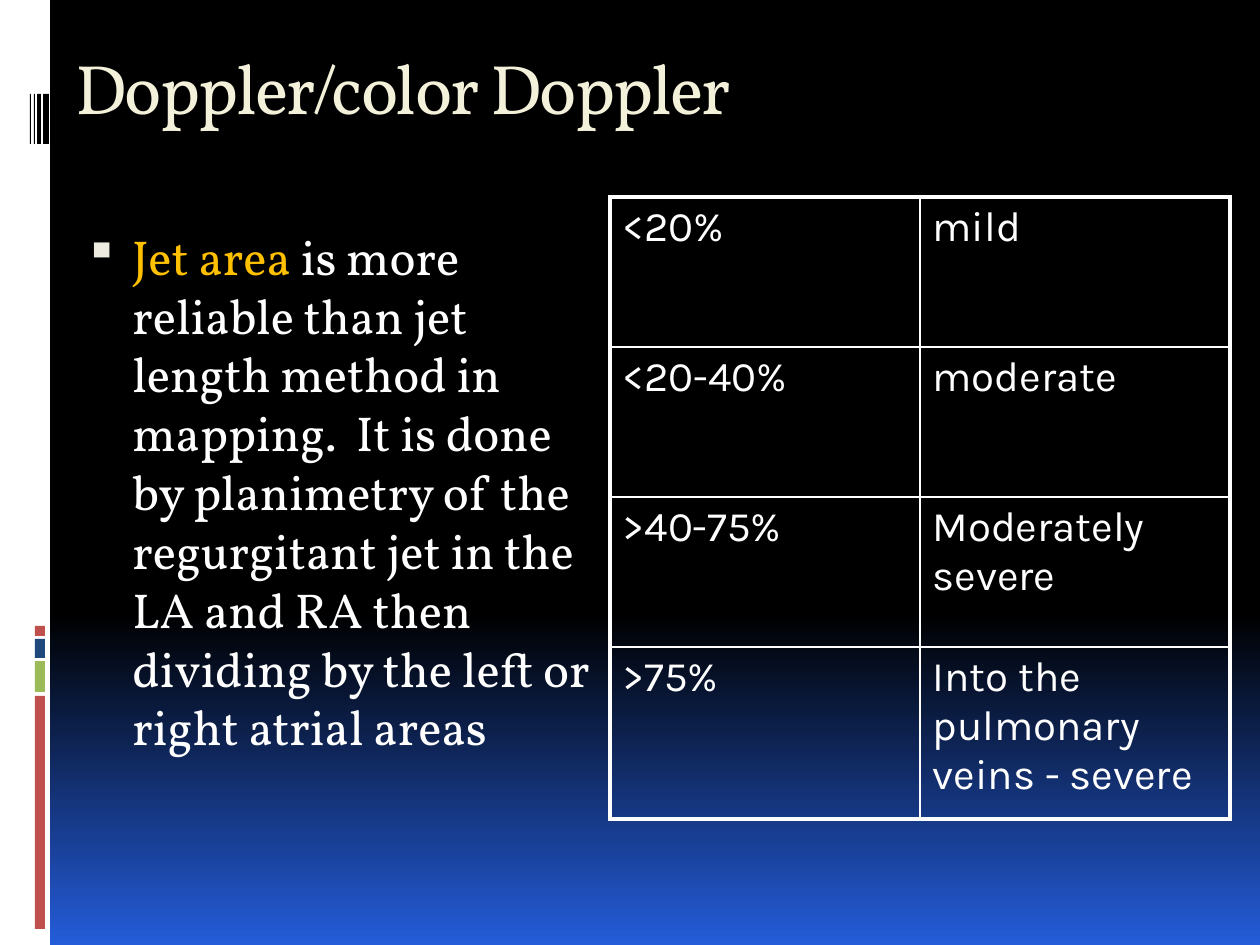
from lxml.etree import SubElement
from pptx import Presentation
from pptx.dml.color import RGBColor
from pptx.enum.shapes import MSO_SHAPE
from pptx.enum.text import MSO_ANCHOR
from pptx.oxml.ns import qn
from pptx.util import Emu, Pt

TITLE = "Doppler/color Doppler"
BODY = [
    ("Jet area ", "FFC000"),
    ("is more reliable than jet length method in mapping.  It is done by "
     "planimetry of the regurgitant jet in the LA and RA then dividing by "
     "the left or right atrial areas", "FFFFFF"),
]
GRADES = [
    ("<20%", "mild"),
    ("<20-40%", "moderate"),
    (">40-75%", "Moderately severe"),
    (">75%", "Into the pulmonary veins - severe"),
]
ROWS = [150, 150, 150, 172]
COL = 310
THICK, THIN = 2.25, 1

# left, top, width, height, colour
BARS = [
    (0, 0, 50, 945, "FFFFFF"),
    (35, 696, 10, 233, "C0504D"),
    (35, 661, 10, 31, "9BBB59"),
    (35, 639, 10, 19, "1F497D"),
    (35, 626, 10, 10, "C0504D"),
    (43, 94, 6, 50, "000000"),
    (37, 94, 4, 50, "000000"),
    (34, 94, 1, 50, "000000"),
    (30, 94, 1, 50, "000000"),
]


def px(n):
    return Emu(round(n * 914400 / 126))


def rgb(code):
    return RGBColor.from_string(code)


def add_run(para, text, font, size, color):
    run = para.add_run()
    run.text = text
    run.font.name = font
    run.font.size = Pt(size)
    run.font.color.rgb = rgb(color)
    return run


def add_box(slide, *place):
    frame = slide.shapes.add_textbox(*map(px, place)).text_frame
    frame.word_wrap = True
    frame.vertical_anchor = MSO_ANCHOR.TOP
    return frame.paragraphs[0]


def add_bullet(para):
    props = para._p.get_or_add_pPr()
    props.set("marL", str(px(57)))
    props.set("indent", str(px(-48)))
    SubElement(SubElement(props, qn("a:buClr")), qn("a:srgbClr"), val="EEECE1")
    SubElement(props, qn("a:buSzPct"), val="95000")
    SubElement(props, qn("a:buChar"), char="▪")


def set_edges(cell, widths):
    """Draw white borders; widths maps each side L, R, T, B to points."""
    props = cell._tc.get_or_add_tcPr()
    for side, width in widths.items():
        line = SubElement(props, qn(f"a:ln{side}"), w=str(Pt(width)))
        fill = SubElement(line, qn("a:solidFill"))
        SubElement(fill, qn("a:srgbClr"), val="FFFFFF")


def add_grades(slide):
    count = len(GRADES)
    table = slide.shapes.add_table(
        count, 2, px(610), px(197), px(2 * COL), px(sum(ROWS))).table
    table.first_row = table.horz_banding = False
    for col in table.columns:
        col.width = px(COL)
    for r, texts in enumerate(GRADES):
        table.rows[r].height = px(ROWS[r])
        for c, text in enumerate(texts):
            cell = table.cell(r, c)
            outer = {"L": c == 0, "R": c == 1, "T": r == 0, "B": r == count - 1}
            set_edges(cell, {s: THICK if o else THIN for s, o in outer.items()})
            cell.fill.background()
            add_run(cell.text_frame.paragraphs[0], text, "Karla", 24, "FFFFFF")


def main():
    deck = Presentation()
    deck.slide_width, deck.slide_height = px(1260), px(945)
    slide = deck.slides.add_slide(deck.slide_layouts[6])

    back = slide.background.fill
    back.gradient()
    back.gradient_angle = 270
    for stop, (place, color) in zip(
            back.gradient_stops, [(0.65, "000000"), (1, "245CD9")]):
        stop.position = place
        stop.color.rgb = rgb(color)

    for *place, color in BARS:
        bar = slide.shapes.add_shape(MSO_SHAPE.RECTANGLE, *map(px, place))
        bar.shadow.inherit = False
        bar.fill.solid()
        bar.fill.fore_color.rgb = rgb(color)
        bar.line.fill.background()

    title = add_run(add_box(slide, 63, 38, 1134, 157),
                    TITLE, "Vollkorn", 40, "F4F1DA")
    title.font._rPr.set("spc", "-100")

    para = add_box(slide, 63, 220, 557, 624)
    add_bullet(para)
    for text, color in BODY:
        add_run(para, text, "Vollkorn", 28, color)

    add_grades(slide)
    deck.save("out.pptx")


if __name__ == "__main__":
    main()
